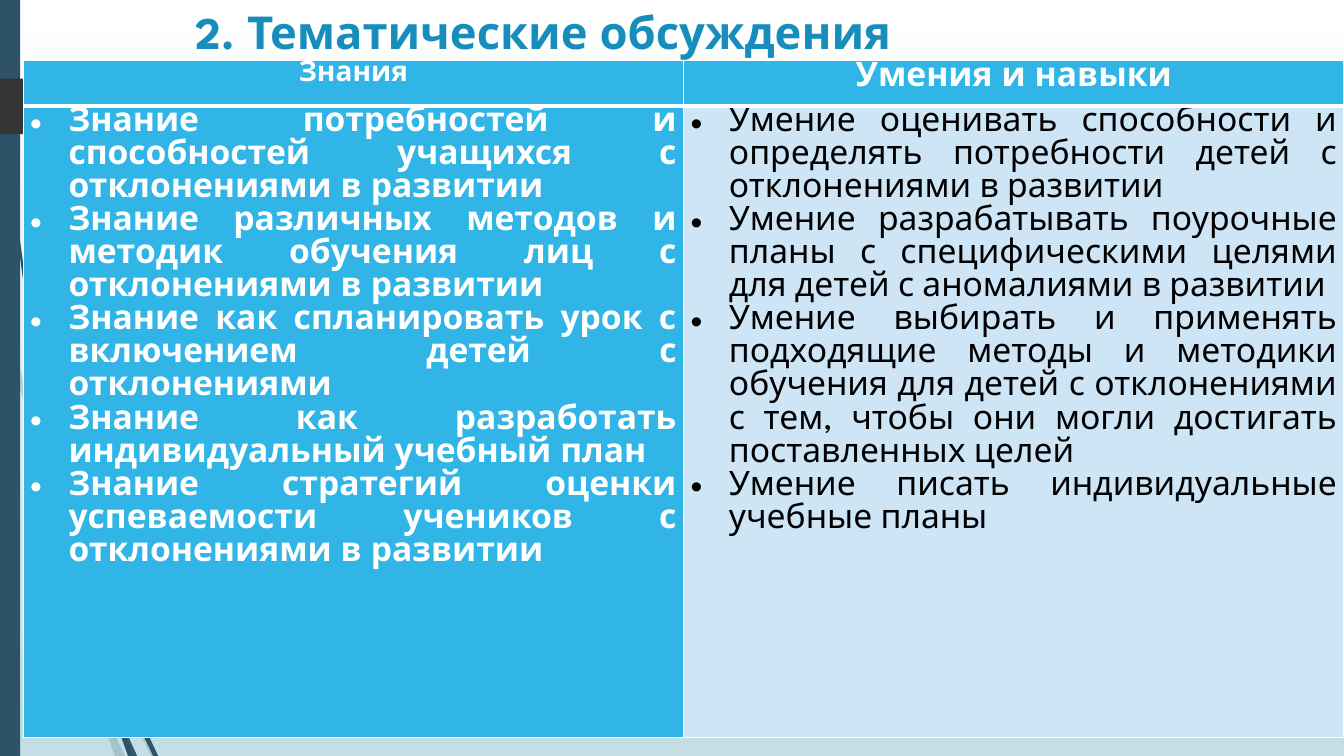
from lxml.etree import SubElement
from pptx import Presentation
from pptx.dml.color import RGBColor
from pptx.enum.shapes import MSO_SHAPE as Preset
from pptx.enum.text import MSO_ANCHOR as Anchor, PP_ALIGN as Align
from pptx.oxml.ns import qn
from pptx.util import Inches, Pt

COLORS = {
    "white": "FFFFFF", "black": "000000", "mist": "C5DEE5", "slate": "2E5369",
    "charcoal": "353535", "title": "178DBB", "blue": "31B4E6", "pale": "CEE5F5",
}
FONT = "League Spartan"
WIDTH, HEIGHT = Inches(13.33), Inches(7.5)
COLUMN, ROW = WIDTH / 58, HEIGHT / 50
HUNDREDTH = 9144.0  # EMU in a hundredth of an inch

# Outlines of the blades of grass, in hundredths of an inch
PALE_BLADES = [
    [(14, 345), (17, 376), (58, 522), (84, 599), (85, 586), (62, 520)],
    [(88, 596), (88, 610), (123, 694), (150, 750), (155, 750), (127, 692)],
    [(105, 711), (119, 750), (124, 750)],
    [(101, 714), (114, 750), (119, 750)],
    [(93, 683), (99, 707), (119, 750), (105, 711)],
]
DARK_BLADES = [
    [(3, 0), (7, 110), (17, 233), (33, 355), (57, 481), (55, 453), (36, 355),
     (19, 232), (8, 109), (4, 0)],
    [(110, 641), (111, 656), (132, 708), (152, 750), (157, 750), (136, 706)],
    [(122, 719), (133, 750), (136, 750)],
    [(117, 722), (127, 750), (131, 750)],
    [(110, 691), (117, 722), (130, 750), (133, 750), (122, 719)],
]

KNOWLEDGE = [
    "Знание потребностей и способностей учащихся с отклонениями в развитии",
    "Знание различных методов и методик обучения лиц с отклонениями в развитии",
    "Знание как спланировать урок с включением детей с отклонениями",
    "Знание как разработать индивидуальный учебный план",
    "Знание стратегий оценки успеваемости учеников с отклонениями в развитии",
]
SKILLS = [
    "Умение оценивать способности и определять потребности детей с отклонениями в развитии",
    "Умение разрабатывать поурочные планы с специфическими целями для детей "
    "с аномалиями в развитии",
    "Умение выбирать и применять подходящие методы и методики обучения для детей "
    "с отклонениями с тем, чтобы они могли достигать поставленных целей",
    "Умение писать индивидуальные учебные планы",
]


def rgb(name):
    return RGBColor.from_string(COLORS[name])


def grid(left, top, width, height):
    """Turn grid columns and rows into slide lengths."""
    return (round(left * COLUMN), round(top * ROW),
            round(width * COLUMN), round(height * ROW))


def paint(shape, color, opacity=100):
    shape.shadow.inherit = False
    shape.line.fill.background()
    shape.fill.solid()
    shape.fill.fore_color.rgb = rgb(color)
    if opacity < 100:
        color_element = shape.fill._xPr.find(".//" + qn("a:srgbClr"))
        SubElement(color_element, qn("a:alpha"), val=str(opacity * 1000))


def add_preset(slide, preset, area, color):
    shape = slide.shapes.add_shape(preset, *grid(*area))
    paint(shape, color)
    return shape


def add_blades(slide, outlines, opacity):
    for first, *rest in outlines:
        builder = slide.shapes.build_freeform(*first, scale=HUNDREDTH)
        builder.add_line_segments(rest, close=True)
        paint(builder.convert_to_shape(), "slate", opacity)


def style_font(paragraph, size, color, bold=True):
    font = paragraph.font
    font.name, font.size, font.bold = FONT, Pt(size), bold
    font.color.rgb = rgb(color)


def set_background(slide):
    fill = slide.background.fill
    fill.gradient()
    fill.gradient_angle = 270
    for stop, color, position in zip(fill.gradient_stops, ("white", "mist"), (0, 1)):
        stop.color.rgb = rgb(color)
        stop.position = position


def add_title(slide, text):
    title = slide.shapes.title
    slide.shapes._spTree.append(title._element)  # in front of the decoration
    title.left, title.top, title.width, title.height = grid(8, 0, 43.5, 4.8)
    frame = title.text_frame
    frame.text = text
    frame.word_wrap = True
    frame.vertical_anchor = Anchor.TOP
    frame.margin_top = Inches(0.04)
    paragraph = frame.paragraphs[0]
    paragraph.alignment = Align.LEFT
    style_font(paragraph, 32.4, "title")


def set_borders(cell, top, bottom):
    """Draw white cell borders; top and bottom are widths in points."""
    properties = cell._tc.get_or_add_tcPr()
    widths = {"a:lnL": 1, "a:lnR": 1, "a:lnT": top, "a:lnB": bottom}
    for index, (tag, width) in enumerate(widths.items()):
        line = SubElement(properties, qn(tag), w=str(Pt(width)))
        fill = SubElement(line, qn("a:solidFill"))
        SubElement(fill, qn("a:srgbClr"), val=COLORS["white"])
        properties.insert(index, line)


def add_bullet(paragraph):
    properties = paragraph._p.get_or_add_pPr()
    indent = Inches(0.38)
    properties.set("marL", str(indent))
    properties.set("indent", str(-indent))
    SubElement(properties, qn("a:buFont"), typeface="Arial")
    SubElement(properties, qn("a:buChar"), char="•")


def fill_cell(cell, lines, fill, size=24, color="white", bold=True, bulleted=False):
    cell.fill.solid()
    cell.fill.fore_color.rgb = rgb(fill)
    cell.margin_left = cell.margin_right = Inches(0.07)
    cell.margin_top = cell.margin_bottom = 0
    cell.text = "\n".join(lines)
    for paragraph in cell.text_frame.paragraphs:
        paragraph.alignment = Align.JUSTIFY if bulleted else Align.CENTER
        paragraph.line_spacing = 1.07
        if bulleted:
            add_bullet(paragraph)
        style_font(paragraph, size, color, bold)


def add_competence_table(slide):
    table = slide.shapes.add_table(2, 2, *grid(1, 4, 57, 44.8)).table
    table.first_col = True
    table.horz_banding = False
    for row, height in zip(table.rows, (3, 41.8)):
        row.height = round(height * ROW)
    fill_cell(table.cell(0, 0), ["Знания"], "blue", size=20)
    fill_cell(table.cell(0, 1), ["Умения и навыки"], "blue")
    fill_cell(table.cell(1, 0), KNOWLEDGE, "blue", bulleted=True)
    fill_cell(table.cell(1, 1), SKILLS, "pale", color="black", bold=False, bulleted=True)
    for column in range(2):
        set_borders(table.cell(0, column), top=1, bottom=3)
        set_borders(table.cell(1, column), top=3, bottom=1)


def main():
    presentation = Presentation()
    presentation.slide_width, presentation.slide_height = WIDTH, HEIGHT
    slide = presentation.slides.add_slide(presentation.slide_layouts[5])
    set_background(slide)
    add_blades(slide, PALE_BLADES, opacity=20)
    add_blades(slide, DARK_BLADES, opacity=100)
    add_preset(slide, Preset.RECTANGLE, (0, 0, 0.87, 50), "slate")
    marker = add_preset(slide, Preset.PENTAGON, (0, 5.2, 7.57, 3.67), "charcoal")
    marker.adjustments[0] = 0.47
    add_title(slide, "2. Тематические обсуждения")
    add_competence_table(slide)
    presentation.save("out.pptx")


if __name__ == "__main__":
    main()
